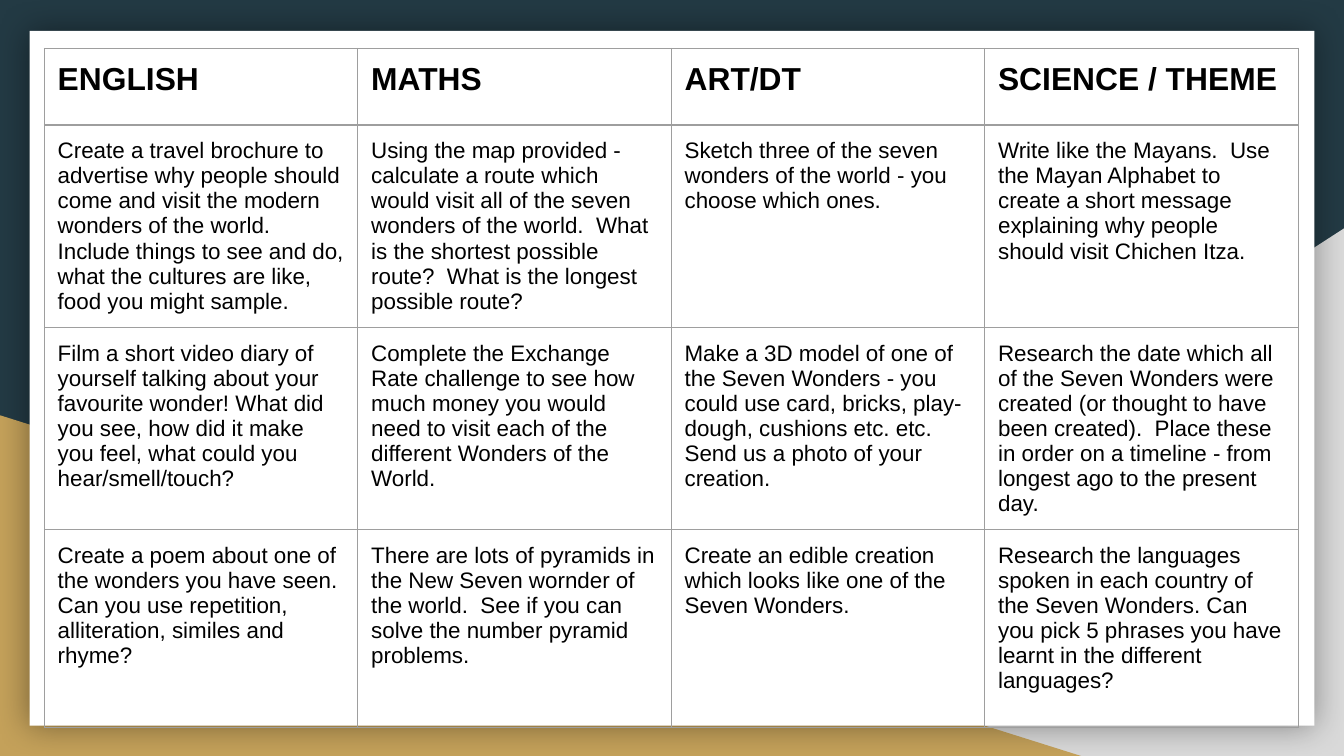
from lxml import etree
from pptx import Presentation
from pptx import util as u
from pptx.dml import color
from pptx.enum import shapes, text
from pptx.oxml import ns

FONT = "Arial"
BORDER = "9E9E9E"
CELL_MARGIN = u.Emu(91425)
HEADINGS = ["ENGLISH", "MATHS", "ART/DT", "SCIENCE / THEME"]
ACTIVITIES = [
    [
        "Create a travel brochure to advertise why people should come and visit the modern wonders of the world. Include things to see and do, what the cultures are like, food you might sample.",
        "Using the map provided - calculate a route which would visit all of the seven wonders of the world.  What is the shortest possible route?  What is the longest possible route?",
        "Sketch three of the seven wonders of the world - you choose which ones.",
        "Write like the Mayans.  Use the Mayan Alphabet to create a short message explaining why people should visit Chichen Itza.",
    ],
    [
        "Film a short video diary of yourself talking about your favourite wonder! What did you see, how did it make you feel, what could you hear/smell/touch?",
        "Complete the Exchange Rate challenge to see how much money you would need to visit each of the different Wonders of the World.",
        "Make a 3D model of one of the Seven Wonders - you could use card, bricks, play-dough, cushions etc. etc.  Send us a photo of your creation.",
        "Research the date which all of the Seven Wonders were created (or thought to have been created).  Place these in order on a timeline - from longest ago to the present day.",
    ],
    [
        "Create a poem about one of the wonders you have seen. Can you use repetition, alliteration, similes and rhyme?",
        "There are lots of pyramids in the New Seven wornder of the world.  See if you can solve the number pyramid problems.",
        "Create an edible creation which looks like one of the Seven Wonders.",
        "Research the languages spoken in each country of the Seven Wonders. Can you pick 5 phrases you have learnt in the different languages?",
    ],
]


def rgb(value):
    return color.RGBColor.from_string(value)


class SlideBuilder:
    def __init__(self, slide, font, border):
        self.slide = slide
        self.font = font
        self.border = border

    def background(self, fill):
        self.slide.background.fill.solid()
        self.slide.background.fill.fore_color.rgb = rgb(fill)

    def block(self, kind, left, top, width, height, fill):
        shape = self.slide.shapes.add_shape(
            kind, u.Inches(left), u.Inches(top), u.Inches(width), u.Inches(height))
        shape.shadow.inherit = False
        shape.fill.solid()
        shape.fill.fore_color.rgb = rgb(fill)
        shape.line.fill.background()
        return shape

    def flip(self, shape):
        shape._element.spPr.find(ns.qn("a:xfrm")).set("flipH", "1")

    def glow(self, shape, blur, opacity):
        effects = shape._element.spPr.find(ns.qn("a:effectLst"))
        shadow = etree.SubElement(
            effects, ns.qn("a:outerShdw"), blurRad=str(u.Pt(blur)), dist="0", algn="ctr", rotWithShape="0")
        shade = etree.SubElement(shadow, ns.qn("a:srgbClr"), val="000000")
        etree.SubElement(shade, ns.qn("a:alpha"), val=str(opacity * 1000))

    def cell(self, cell, wording, size, bold):
        cell.fill.background()
        cell.margin_left = cell.margin_right = CELL_MARGIN
        cell.margin_top = cell.margin_bottom = CELL_MARGIN
        cell.vertical_anchor = text.MSO_ANCHOR.TOP
        run = cell.text_frame.paragraphs[0].add_run()
        run.text = wording
        run.font.name = self.font
        run.font.size = u.Pt(size)
        run.font.bold = bold
        run.font.color.rgb = rgb("000000")
        properties = cell._tc.get_or_add_tcPr()
        for position, side in enumerate(("lnL", "lnR", "lnT", "lnB")):
            line = etree.Element(ns.qn(f"a:{side}"), w=str(u.Pt(0.75)))
            fill = etree.SubElement(line, ns.qn("a:solidFill"))
            etree.SubElement(fill, ns.qn("a:srgbClr"), val=self.border)
            properties.insert(position, line)

    def table(self, left, top, width, heights, rows):
        columns = len(rows[0])
        frame = self.slide.shapes.add_table(
            len(rows), columns, u.Inches(left), u.Inches(top),
            u.Inches(width), u.Inches(sum(heights)))
        table = frame.table
        table.first_row = table.horz_banding = False
        for column in table.columns:
            column.width = u.Inches(width / columns)
        for index, (height, wordings) in enumerate(zip(heights, rows)):
            table.rows[index].height = u.Inches(height)
            heading = index == 0
            for column, wording in enumerate(wordings):
                self.cell(table.cell(index, column), wording, 17 if heading else 12, heading)


def main():
    presentation = Presentation()
    presentation.slide_width = u.Inches(10)
    presentation.slide_height = u.Inches(10) * 9 // 16
    slide = presentation.slides.add_slide(presentation.slide_layouts[6])
    builder = SlideBuilder(slide, FONT, BORDER)
    builder.background("233A44")
    triangle = shapes.MSO_SHAPE.RIGHT_TRIANGLE
    builder.flip(builder.block(triangle, 3.92, 1.7, 6.08, 3.93, "D9D9D9"))
    builder.block(triangle, 0, 3.09, 8.06, 2.54, "C4A15A")
    card = builder.block(shapes.MSO_SHAPE.RECTANGLE, 0.22, 0.23, 9.56, 5.17, "FFFFFF")
    builder.glow(card, 18, 40)
    builder.table(0.33, 0.36, 9.33, [0.57] + [1.47] * 3, [HEADINGS] + ACTIVITIES)
    presentation.save("out.pptx")


if __name__ == "__main__":
    main()
